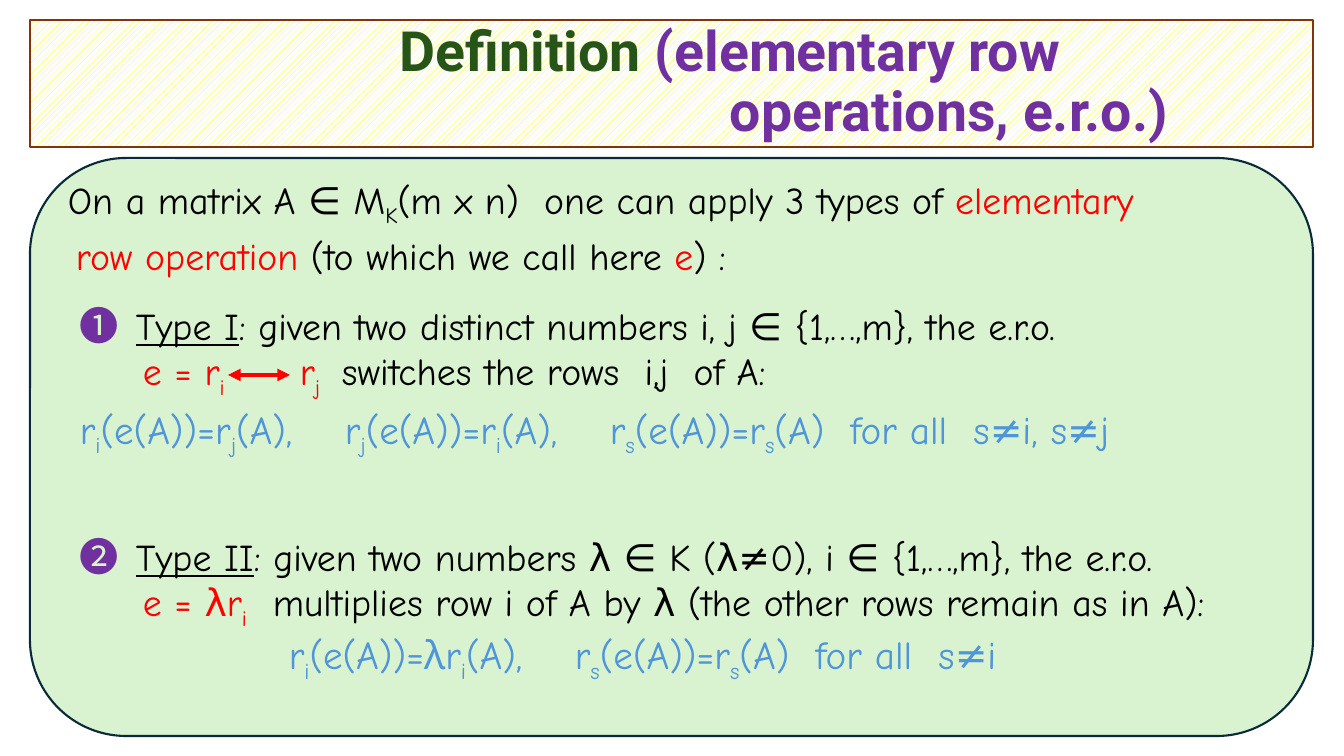
from lxml.etree import SubElement
from pptx import Presentation
from pptx.dml.color import RGBColor
from pptx.enum.dml import MSO_PATTERN
from pptx.enum.shapes import MSO_CONNECTOR, MSO_SHAPE
from pptx.enum.text import MSO_ANCHOR, PP_ALIGN
from pptx.oxml.ns import qn
from pptx.util import Emu, Pt

HUES = {
    "black": "000000", "white": "FFFFFF", "red": "FF0000", "blue": "4E95D9",
    "purple": "7030A0", "green": "275417", "mint": "D9F2D0", "navy": "092A39",
    "yellow": "FFFF00", "brown": "80350E",
}
HAND, MARK, HEAD = "Comic Neue", "Noto Sans CJK JP", "Roboto"


def px(n):
    """Turn pixels into EMU."""
    return Emu(round(n * 914400 / 100.8))


def hue(name):
    """Look up a named colour."""
    return RGBColor.from_string(HUES[name])


def add_run(par, text, color, size=27, face=HAND, bold=False, under=False, sub=False):
    """Add one formatted run."""
    run = par.add_run()
    run.text = text
    font = run.font
    font.name, font.size, font.bold, font.underline = face, Pt(size), bold, under
    font.color.rgb = hue(color)
    if sub:
        font._element.set("baseline", "-25000")
    SubElement(font._element, qn("a:ea"), typeface=face)


def write(par, text, color="black", **style):
    """Write text in which an underscore lowers the next letter."""
    first, *rest = text.split("_")
    if first:
        add_run(par, first, color, **style)
    for part in rest:
        add_run(par, part[0], color, sub=True, **style)
        if part[1:]:
            add_run(par, part[1:], color, **style)


def set_tabs(par, *stops):
    """Give a left-aligned paragraph its tab stops in px."""
    par.alignment = PP_ALIGN.LEFT
    tabs = SubElement(par._p.get_or_add_pPr(), qn("a:tabLst"))
    for stop in stops:
        SubElement(tabs, qn("a:tab"), pos=str(px(stop)), algn="l")


def add_panel(slide, kind, box, line, width):
    """Add an outlined panel for the caller to fill."""
    panel = slide.shapes.add_shape(kind, *map(px, box))
    panel.shadow.inherit = False
    panel.line.color.rgb = hue(line)
    panel.line.width = Pt(width)
    return panel


def add_text(slide, box):
    """Add a wrapping text box and return its frame."""
    frame = slide.shapes.add_textbox(*map(px, box)).text_frame
    frame.word_wrap = True
    return frame


def add_title(slide, box):
    """Place the hatched title banner with its two stepped lines."""
    panel = add_panel(slide, MSO_SHAPE.RECTANGLE, box, "brown", 2)
    panel.fill.patterned()
    panel.fill.pattern = MSO_PATTERN.WIDE_UPWARD_DIAGONAL
    panel.fill.fore_color.rgb = hue("yellow")
    panel.fill.back_color.rgb = hue("white")
    frame = panel.text_frame
    frame.vertical_anchor = MSO_ANCHOR.MIDDLE
    style = {"size": 39.6, "face": HEAD, "bold": True}
    top, low = frame.paragraphs[0], frame.add_paragraph()
    for par, stop in ((top, 360), (low, 690)):
        par.line_spacing = 0.9
        set_tabs(par, stop)
    write(top, "\tDefinition ", "green", **style)
    write(top, "(elementary row", "purple", **style)
    write(low, "\toperations, e.r.o.)", "purple", **style)


def add_intro(slide, box):
    """Place the opening sentence."""
    frame = add_text(slide, box)
    top, low = frame.paragraphs[0], frame.add_paragraph()
    for par, stop in ((top, 18), (low, 26)):
        par.line_spacing = 0.9
        par.space_before = Pt(10)
        set_tabs(par, stop)
    write(top, "\t", size=28, face=MARK)
    write(top, "On a matrix A ∈ M_K(m x n)  one can apply 3 types of ")
    write(top, "elementary", "red")
    write(low, "\trow operation ", "red")
    write(low, "(to which we call here ")
    write(low, "e", "red")
    write(low, ") :")


def add_type(slide, box, mark, name, given, rule, effect, stops):
    """Place a numbered operation type and return its frame."""
    frame = add_text(slide, box)
    top, low = frame.paragraphs[0], frame.add_paragraph()
    set_tabs(top, 56)
    write(top, mark + "\t", "purple", size=28, face=MARK)
    write(top, name, under=True)
    write(top, given)
    set_tabs(low, 63, *stops)
    write(low, "\t" + rule, "red")
    write(low, "\t" + effect)
    return frame


def add_rows(par, text, *stops):
    """Write a line of row equations."""
    set_tabs(par, *stops)
    write(par, text, "blue", size=28)


def add_swap(slide, x, y, width):
    """Draw the double-headed swap arrow."""
    line = slide.shapes.add_connector(
        MSO_CONNECTOR.STRAIGHT, px(x), px(y), px(x + width), px(y))
    line.line.color.rgb = hue("red")
    line.line.width = Pt(3)
    for end in ("a:headEnd", "a:tailEnd"):
        SubElement(line.line._get_or_add_ln(), qn(end), type="triangle")
    SubElement(line._element.spPr, qn("a:effectLst"))


def add_body(slide, box):
    """Place the rounded panel and the text within it."""
    x, y, width, _ = box
    panel = add_panel(slide, MSO_SHAPE.ROUNDED_RECTANGLE, box, "navy", 1.5)
    panel.fill.solid()
    panel.fill.fore_color.rgb = hue("mint")
    add_intro(slide, (x + 10, y + 13, width - 10, 120))
    left, room = x + 40, width - 50
    add_type(slide, (left, y + 138, room, 104), "➊", "Type I",
             ": given two distinct numbers i, j ∈ {1,…,m}, the e.r.o.",
             "e = r_i\tr_j", "switches the rows  i,j  of A:", (220, 262))
    add_swap(slide, x + 198, y + 217, 62)
    rows = add_text(slide, (left, y + 242, room, 89))
    add_rows(rows.paragraphs[0],
             "r_i(e(A))=r_j(A),\tr_j(e(A))=r_i(A),\tr_s(e(A))=r_s(A)  for all  s≠i, s≠j",
             265, 530)
    frame = add_type(slide, (left, y + 369, room, 170), "➋", "Type II",
                     ": given two numbers λ ∈ K (λ≠0), i ∈ {1,…,m}, the e.r.o.",
                     "e = λr_i",
                     "multiplies row i of A by λ (the other rows remain as in A):",
                     (193,))
    add_rows(frame.add_paragraph(),
             "\tr_i(e(A))=λr_i(A),\tr_s(e(A))=r_s(A)  for all  s≠i", 209, 495)


def main():
    """Build and save the slide."""
    deck = Presentation()
    deck.slide_width, deck.slide_height = px(1344), px(756)
    slide = deck.slides.add_slide(deck.slide_layouts[6])
    add_title(slide, (30, 20, 1283, 127))
    add_body(slide, (30, 158, 1283, 578))
    deck.save("out.pptx")


if __name__ == "__main__":
    main()
